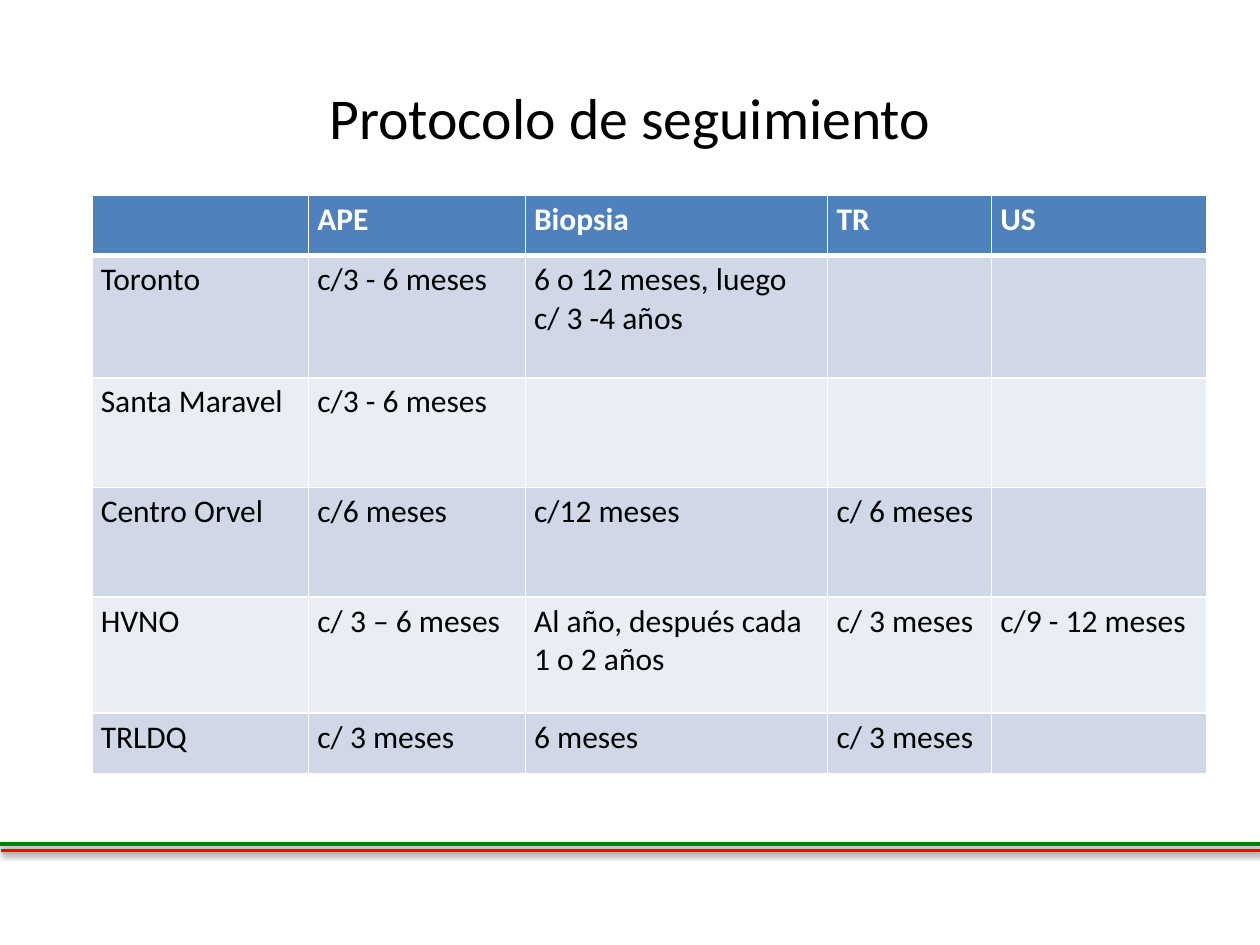
from lxml import etree
from pptx import Presentation
from pptx.dml.color import RGBColor
from pptx.enum.shapes import MSO_CONNECTOR
from pptx.enum.text import MSO_ANCHOR, PP_ALIGN
from pptx.oxml import parse_xml
from pptx.util import Inches, Pt

STRAIGHT = MSO_CONNECTOR.STRAIGHT
MIDDLE = MSO_ANCHOR.MIDDLE
CENTER = PP_ALIGN.CENTER

BLACK = RGBColor(0x00, 0x00, 0x00)
WHITE = RGBColor(0xFF, 0xFF, 0xFF)
GREEN = RGBColor(0x00, 0x80, 0x00)
RED = RGBColor(0xFF, 0x00, 0x00)
HEADER_BLUE = RGBColor(0x4F, 0x81, 0xBD)
BAND_DARK = RGBColor(0xD0, 0xD8, 0xE8)
BAND_LIGHT = RGBColor(0xE9, 0xED, 0xF4)

FONT = "Calibri"
DRAWING_NS = "http://schemas.openxmlformats.org/drawingml/2006/main"
SHADOW_XML = f"""<a:effectLst xmlns:a="{DRAWING_NS}">
  <a:outerShdw blurRad="{Pt(3.1)}" dist="{Pt(1.6)}" dir="5400000" rotWithShape="0">
    <a:srgbClr val="{BLACK}"><a:alpha val="38000"/></a:srgbClr>
  </a:outerShdw>
</a:effectLst>"""

COLUMN_WIDTHS = [1.72, 1.72, 2.4, 1.3, 1.71]
ROW_HEIGHTS = [0.48, 0.97, 0.87, 0.87, 0.92, 0.48]
ROWS = [
    ["", "APE", "Biopsia", "TR", "US"],
    ["Toronto", "c/3 - 6 meses", "6 o 12 meses, luego c/ 3 -4 años", "", ""],
    ["Santa Maravel", "c/3 - 6 meses", "", "", ""],
    ["Centro Orvel", "c/6 meses", "c/12 meses", "c/ 6 meses", ""],
    ["HVNO", "c/ 3 – 6 meses", "Al año, después cada 1 o 2 años", "c/ 3 meses", "c/9 - 12 meses"],
    ["TRLDQ", "c/ 3 meses", "6 meses", "c/ 3 meses", ""],
]


def set_borders(cell, widths):
    """Draw white borders; widths maps each side (L, R, T, B) to points."""
    properties = cell._tc.get_or_add_tcPr()
    for position, side in enumerate("LRTB"):
        line = etree.Element(f"{{{DRAWING_NS}}}ln{side}", w=str(Pt(widths[side])))
        fill = etree.SubElement(line, f"{{{DRAWING_NS}}}solidFill")
        etree.SubElement(fill, f"{{{DRAWING_NS}}}srgbClr", val=str(WHITE))
        properties.insert(position, line)


def style_font(font, size, color, bold=False):
    font.name = FONT
    font.size = Pt(size)
    font.color.rgb = color
    font.bold = bold


presentation = Presentation()
presentation.slide_width = Inches(10)
presentation.slide_height = Inches(7.5)
slide = presentation.slides.add_slide(presentation.slide_layouts[6])

# Two-colour footer rule
for left, top, color in [(0, 6.7, GREEN), (0.01, 6.75, RED)]:
    rule = slide.shapes.add_connector(
        STRAIGHT, Inches(left), Inches(top), Inches(left + 10), Inches(top))
    rule.line.color.rgb = color
    rule.line.width = Pt(2)
    rule._element.spPr.append(parse_xml(SHADOW_XML))

# Title
title = slide.shapes.add_textbox(Inches(0.5), Inches(0.3), Inches(9), Inches(1.25))
title_frame = title.text_frame
title_frame.word_wrap = True
title_frame.vertical_anchor = MIDDLE
title_frame.text = "Protocolo de seguimiento"
title_paragraph = title_frame.paragraphs[0]
title_paragraph.alignment = CENTER
style_font(title_paragraph.font, 33, BLACK)

# Follow-up table
table = slide.shapes.add_table(
    len(ROWS), len(COLUMN_WIDTHS), Inches(0.73), Inches(1.55),
    Inches(sum(COLUMN_WIDTHS)), Inches(sum(ROW_HEIGHTS))).table
for column, width in zip(table.columns, COLUMN_WIDTHS):
    column.width = Inches(width)
for row, height in zip(table.rows, ROW_HEIGHTS):
    row.height = Inches(height)

for row_index, texts in enumerate(ROWS):
    is_header = row_index == 0
    if is_header:
        fill_color = HEADER_BLUE
    else:
        fill_color = BAND_DARK if row_index % 2 else BAND_LIGHT
    border_widths = {
        "L": 1, "R": 1,
        "T": 3 if row_index == 1 else 1,
        "B": 3 if is_header else 1,
    }
    for column_index, text in enumerate(texts):
        cell = table.cell(row_index, column_index)
        cell.text = text
        cell.margin_left = cell.margin_right = Inches(0.07)
        cell.margin_top = cell.margin_bottom = Inches(0.04)
        cell.fill.solid()
        cell.fill.fore_color.rgb = fill_color
        set_borders(cell, border_widths)
        style_font(cell.text_frame.paragraphs[0].font, 18,
                   WHITE if is_header else BLACK, is_header)

presentation.save("out.pptx")
